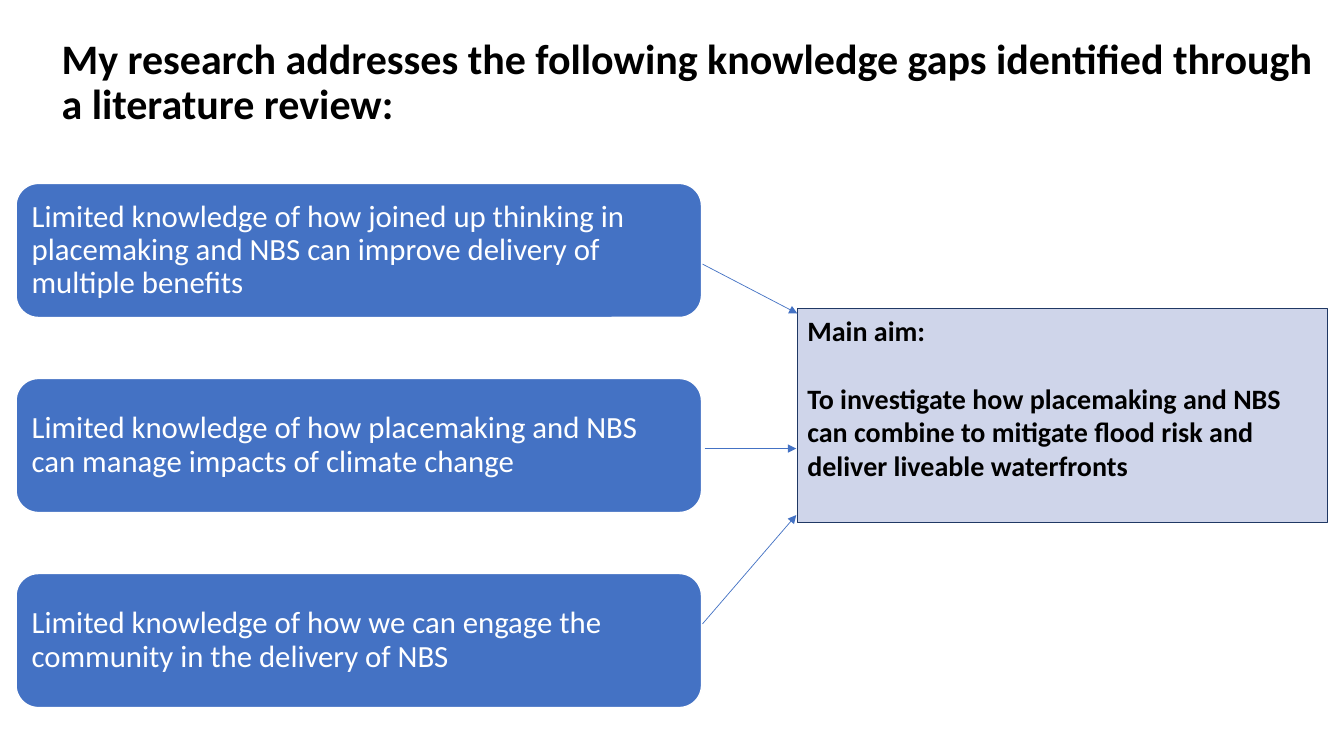
from dataclasses import dataclass

from lxml import etree
from pptx import Presentation
from pptx.dml.color import RGBColor
from pptx.enum.shapes import MSO_CONNECTOR, MSO_SHAPE
from pptx.enum.text import MSO_ANCHOR, PP_ALIGN
from pptx.oxml.ns import qn
from pptx.shapes.autoshape import Shape
from pptx.slide import Slide
from pptx.text.text import TextFrame
from pptx.util import Inches, Length, Pt

RECTANGLE, ROUNDED = MSO_SHAPE.RECTANGLE, MSO_SHAPE.ROUNDED_RECTANGLE
STRAIGHT = MSO_CONNECTOR.STRAIGHT
TOP, MIDDLE, LEFT = MSO_ANCHOR.TOP, MSO_ANCHOR.MIDDLE, PP_ALIGN.LEFT
SLIDE_WIDTH, SLIDE_HEIGHT = Inches(13.33), Inches(7.5)
TITLE_ONLY_LAYOUT = 5


@dataclass(frozen=True)
class Theme:
    font: str = "Calibri"
    dark: RGBColor = RGBColor(0x00, 0x00, 0x00)
    light: RGBColor = RGBColor(0xFF, 0xFF, 0xFF)
    gap_fill: RGBColor = RGBColor(0x44, 0x72, 0xC4)
    aim_fill: RGBColor = RGBColor(0xCF, 0xD5, 0xEA)
    aim_line: RGBColor = RGBColor(0x20, 0x38, 0x64)
    title_size: int = 30
    gap_size: int = 22
    aim_size: int = 20


@dataclass(frozen=True)
class Area:
    """Left, top, width and height in percent of the slide."""
    left: float
    top: float
    width: float
    height: float

    def lengths(self) -> tuple[Length, Length, Length, Length]:
        return across(self.left), down(self.top), across(self.width), down(self.height)


@dataclass(frozen=True)
class Block:
    """A filled box: its outline, colours and line weight in points."""
    area: Area
    outline: MSO_SHAPE
    fill: RGBColor
    line: RGBColor
    line_width: float


@dataclass(frozen=True)
class TextStyle:
    size: int
    color: RGBColor
    bold: bool = False
    line_spacing: float = 1.0


@dataclass(frozen=True)
class Arrow:
    """Start and end points in percent of the slide."""
    start: tuple[float, float]
    end: tuple[float, float]


THEME = Theme()
TITLE = "My research addresses the following knowledge gaps identified through a literature review:"
TITLE_AREA = Area(3.83, 4.53, 94.95, 13.07)
TITLE_STYLE = TextStyle(THEME.title_size, THEME.dark, True, 0.9)

GAPS = (
    "Limited knowledge of how joined up thinking in placemaking and NBS can improve delivery of multiple benefits",
    "Limited knowledge of how placemaking and NBS can manage impacts of climate change",
    "Limited knowledge of how we can engage the community in the delivery of NBS",
)
FIRST_GAP_TOP, GAP_PITCH = 24.27, 25.8
GAP_STYLE = TextStyle(THEME.gap_size, THEME.light, line_spacing=0.9)

AIM = (
    "Main aim:",
    "To investigate how placemaking and NBS can combine to mitigate flood risk and deliver liveable waterfronts",
)
AIM_BLOCK = Block(Area(59.33, 40.8, 39.45, 28.27), RECTANGLE, THEME.aim_fill, THEME.aim_line, 0.75)
AIM_STYLE = TextStyle(THEME.aim_size, THEME.dark, True)

ARROWS = (
    Arrow((52.27, 34.93), (59.33, 41.47)),
    Arrow((52.43, 59.33), (59.25, 59.33)),
    Arrow((52.27, 82.53), (59.25, 68.13)),
)


def across(percent: float) -> Length:
    return Length(round(SLIDE_WIDTH * percent / 100))


def down(percent: float) -> Length:
    return Length(round(SLIDE_HEIGHT * percent / 100))


def write(frame: TextFrame, texts: tuple[str, ...], style: TextStyle,
          anchor: MSO_ANCHOR, gap: float = 0) -> None:
    """Write one paragraph per text, with gap points between them."""
    frame.word_wrap = True
    frame.vertical_anchor = anchor
    for index, text in enumerate(texts):
        paragraph = frame.add_paragraph() if index else frame.paragraphs[0]
        paragraph.alignment = LEFT
        paragraph.line_spacing = style.line_spacing
        paragraph.space_before = Pt(gap if index else 0)
        run = paragraph.add_run()
        run.text = text
        run.font.name = THEME.font
        run.font.size = Pt(style.size)
        run.font.bold = style.bold
        run.font.color.rgb = style.color


def add_title(slide: Slide) -> None:
    title = slide.shapes.title
    title.left, title.top, title.width, title.height = TITLE_AREA.lengths()
    write(title.text_frame, (TITLE,), TITLE_STYLE, MIDDLE)


def add_block(slide: Slide, block: Block) -> Shape:
    shape = slide.shapes.add_shape(block.outline, *block.area.lengths())
    shape.shadow.inherit = False
    shape.fill.solid()
    shape.fill.fore_color.rgb = block.fill
    shape.line.color.rgb = block.line
    shape.line.width = Pt(block.line_width)
    return shape


def add_gap(slide: Slide, text: str, row: int) -> None:
    area = Area(1.2, FIRST_GAP_TOP + row * GAP_PITCH, 51, 17.73)
    shape = add_block(slide, Block(area, ROUNDED, THEME.gap_fill, THEME.light, 1))
    frame = shape.text_frame
    frame.margin_left = frame.margin_right = Inches(0.09)
    frame.margin_top = frame.margin_bottom = Inches(0.09)
    write(frame, (text,), GAP_STYLE, MIDDLE)


def add_arrow(slide: Slide, arrow: Arrow) -> None:
    (start_x, start_y), (end_x, end_y) = arrow.start, arrow.end
    connector = slide.shapes.add_connector(
        STRAIGHT, across(start_x), down(start_y), across(end_x), down(end_y))
    connector.line.color.rgb = THEME.gap_fill
    connector.line.width = Pt(0.5)
    line = connector.line._get_or_add_ln()
    etree.SubElement(line, qn("a:tailEnd"), type="triangle")
    etree.SubElement(connector._element.spPr, qn("a:effectLst"))


def main() -> None:
    presentation = Presentation()
    presentation.slide_width, presentation.slide_height = SLIDE_WIDTH, SLIDE_HEIGHT
    slide = presentation.slides.add_slide(presentation.slide_layouts[TITLE_ONLY_LAYOUT])
    add_title(slide)
    aim = add_block(slide, AIM_BLOCK)
    write(aim.text_frame, AIM, AIM_STYLE, TOP, gap=24.4)
    for row, text in enumerate(GAPS):
        add_gap(slide, text, row)
    for arrow in ARROWS:
        add_arrow(slide, arrow)
    presentation.save("out.pptx")


if __name__ == "__main__":
    main()
